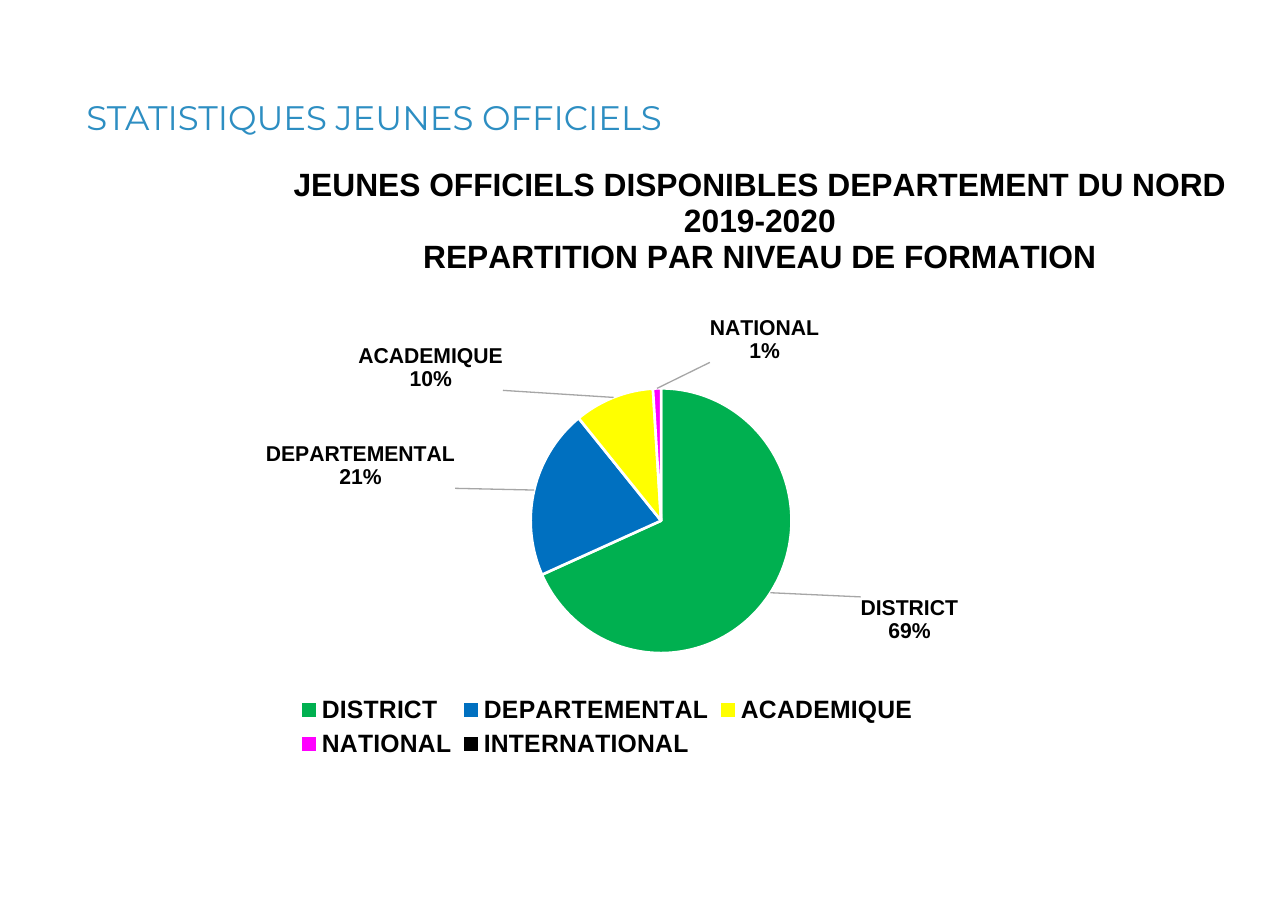
from pptx import Presentation
from pptx.chart.data import CategoryChartData
from pptx.dml.color import RGBColor
from pptx.enum.chart import XL_CHART_TYPE, XL_LABEL_POSITION, XL_LEGEND_POSITION
from pptx.enum.text import MSO_ANCHOR, MSO_AUTO_SIZE, PP_ALIGN
from pptx.oxml import parse_xml
from pptx.oxml.ns import nsdecls
from pptx.util import Inches, Pt

COLORS = {"title": "2D8EC2", "text": "000000", "border": "FFFFFF", "leader": "A6A6A6"}
LEVELS = [
    ("DISTRICT", 69, "00B050", (0.07, 0)),
    ("DEPARTEMENTAL", 21, "0070C0", (-0.06, 0)),
    ("ACADEMIQUE", 10, "FFFF00", (-0.09, 0)),
    ("NATIONAL", 1, "FF00FF", (0.09, -0.03)),
    ("INTERNATIONAL", 0, "000000", None),
]
CHART_TITLE = [
    "JEUNES OFFICIELS DISPONIBLES DEPARTEMENT DU NORD 2019-2020",
    "REPARTITION PAR NIVEAU DE FORMATION",
]


def layout_xml(x, y, width=None, height=None, inner=False):
    """Return a manual chart layout, in fractions of the chart."""
    parts = ['<c:layoutTarget val="inner"/>'] if inner else []
    if width is not None or inner:
        parts += ['<c:xMode val="edge"/>', '<c:yMode val="edge"/>']
    parts += [f'<c:x val="{x}"/>', f'<c:y val="{y}"/>']
    if width:
        parts += [f'<c:w val="{width}"/>', f'<c:h val="{height}"/>']
    content = "".join(parts)
    return f'<c:layout {nsdecls("c")}><c:manualLayout>{content}</c:manualLayout></c:layout>'


class SlideBuilder:
    """Holds the style and the current slide."""

    def __init__(self, presentation):
        self.slide = presentation.slides.add_slide(presentation.slide_layouts[5])

    def style(self, font, size, color="text", bold=True, name="Arial"):
        font.name, font.size, font.bold = name, Pt(size), bold
        font.color.rgb = RGBColor.from_string(COLORS[color])

    def title(self, text, left, top, width, height):
        shape = self.slide.shapes.title
        shape.left, shape.top = Inches(left), Inches(top)
        shape.width, shape.height = Inches(width), Inches(height)
        frame = shape.text_frame
        frame.text = text
        frame.margin_left = frame.margin_right = frame.margin_top = frame.margin_bottom = 0
        frame.vertical_anchor = MSO_ANCHOR.TOP
        frame.auto_size = MSO_AUTO_SIZE.NONE
        paragraph = frame.paragraphs[0]
        paragraph.alignment = PP_ALIGN.LEFT
        self.style(paragraph.font, 19, "title", False, "Montserrat")

    def pie(self, left, top, width, height):
        data = CategoryChartData()
        data.categories = [level[0] for level in LEVELS]
        data.add_series("Series 1", [level[1] for level in LEVELS])
        chart = self.slide.shapes.add_chart(
            XL_CHART_TYPE.PIE, Inches(left), Inches(top), Inches(width), Inches(height), data
        ).chart
        self.style(chart.font, 10, bold=False)
        self.chart_title(chart)
        self.legend(chart)
        plot_area = chart.plots[0]._element.getparent()
        for old in plot_area.xpath("c:layout"):
            plot_area.remove(old)
        plot_area.insert(0, parse_xml(layout_xml(0.43, 0.39, 0.22, 0.43, inner=True)))
        chart.plots[0].vary_by_categories = True
        self.slices(chart.plots[0].series[0])

    def chart_title(self, chart):
        chart.has_title = True
        frame = chart.chart_title.text_frame
        frame.text = "\n".join(CHART_TITLE)
        for paragraph in frame.paragraphs:
            self.style(paragraph.font, 18)
        title = chart.chart_title._element
        for old in title.xpath("c:layout"):
            title.remove(old)
        title.xpath("c:tx")[0].addnext(parse_xml(layout_xml(0.23, 0.02, 0)))
        chart.chart_title.include_in_layout = False

    def legend(self, chart):
        chart.has_legend = True
        legend = chart.legend
        legend.position = XL_LEGEND_POSITION.BOTTOM
        legend.include_in_layout = False
        self.style(legend.font, 14)
        for old in legend._element.xpath("c:layout"):
            legend._element.remove(old)
        position = legend._element.xpath("c:legendPos")[0]
        position.addnext(parse_xml(layout_xml(0.23, 0.88, 0.53, 0.12)))

    def slices(self, series):
        labels = series.data_labels
        labels.show_category_name = labels.show_value = True
        labels.number_format, labels.number_format_is_linked = '0"%"', False
        labels.position = XL_LABEL_POSITION.OUTSIDE_END
        self.style(labels.font, 12)
        for index, (_, _, color, offset) in enumerate(LEVELS):
            point = series.points[index]
            point.format.fill.solid()
            point.format.fill.fore_color.rgb = RGBColor.from_string(color)
            point.format.line.color.rgb = RGBColor.from_string(COLORS["border"])
            point.format.line.width = Pt(1.5)
            labels._element.insert(index, self.point_label(index, offset))
        self.leader_lines(labels._element)

    def leader_lines(self, labels):
        for old in labels.xpath("c:showLeaderLines | c:leaderLines"):
            labels.remove(old)
        labels.append(parse_xml(f'<c:showLeaderLines {nsdecls("c")} val="1"/>'))
        labels.append(parse_xml(
            f'<c:leaderLines {nsdecls("c", "a")}><c:spPr><a:ln w="9525"><a:solidFill>'
            f'<a:srgbClr val="{COLORS["leader"]}"/></a:solidFill></a:ln></c:spPr></c:leaderLines>'
        ))

    def point_label(self, index, offset):
        if offset is None:
            content = '<c:delete val="1"/>'
        else:
            shown = {"LegendKey": 0, "Val": 1, "CatName": 1, "SerName": 0, "Percent": 0, "BubbleSize": 0}
            flags = "".join(f'<c:show{name} val="{value}"/>' for name, value in shown.items())
            content = (
                f'{layout_xml(*offset)}<c:numFmt formatCode="0&quot;%&quot;" sourceLinked="0"/>'
                '<c:spPr><a:noFill/></c:spPr><c:txPr><a:bodyPr/><a:p><a:pPr><a:defRPr sz="1200" b="1">'
                f'<a:solidFill><a:srgbClr val="{COLORS["text"]}"/></a:solidFill><a:latin typeface="Arial"/>'
                '</a:defRPr></a:pPr><a:endParaRPr lang="fr-FR"/></a:p></c:txPr>'
                f'<c:dLblPos val="outEnd"/>{flags}<c:separator>\n</c:separator>'
            )
        return parse_xml(f'<c:dLbl {nsdecls("c", "a")}><c:idx val="{index}"/>{content}</c:dLbl>')


def main():
    """Build and save the slide."""
    presentation = Presentation()
    presentation.slide_width, presentation.slide_height = Inches(10), Inches(7.07)
    builder = SlideBuilder(presentation)
    builder.title("STATISTIQUES JEUNES OFFICIELS", 0.67, 0.75, 8.66, 0.35)
    builder.pie(0.11, 1.15, 9.44, 4.78)
    presentation.save("out.pptx")


if __name__ == "__main__":
    main()
